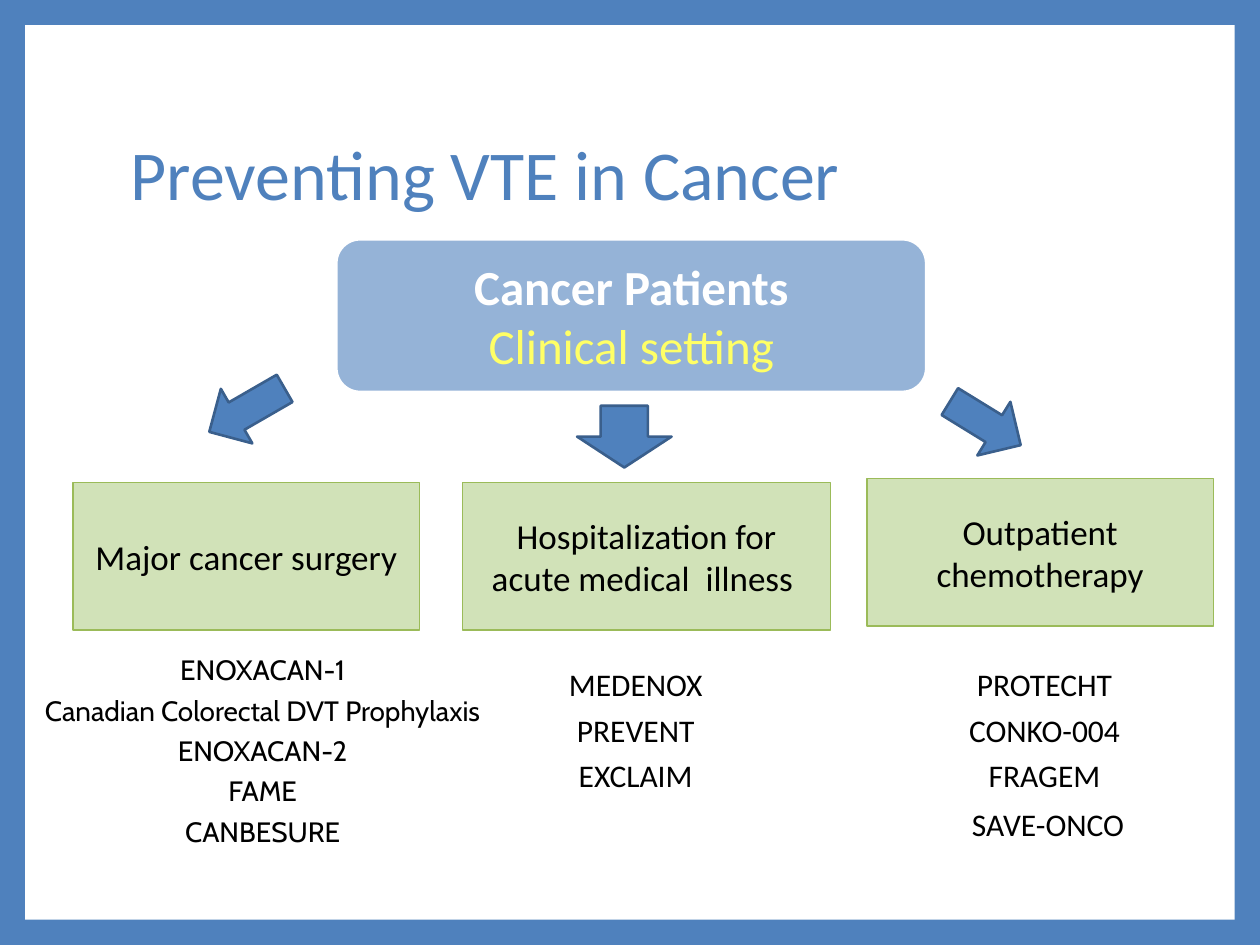
from pptx import Presentation
from pptx.dml.color import RGBColor
from pptx.enum.shapes import MSO_SHAPE as Shape
from pptx.enum.text import MSO_ANCHOR as Anchor, PP_ALIGN as Align
from pptx.util import Inches, Pt

COLORS = {
    "blue": "4F81BD", "dark_blue": "3A5F8C", "pale_blue": "95B3D7",
    "green": "9BBB59", "pale_green": "D1E2B8",
    "white": "FFFFFF", "yellow": "FFFF66", "black": "000000",
}
SETTINGS = [
    ("Major cancer surgery", (0.58, 3.83, 2.75, 1.17)),
    ("Hospitalization for acute medical  illness ", (3.67, 3.83, 2.92, 1.17)),
    ("Outpatient chemotherapy", (6.88, 3.8, 2.75, 1.17)),
]
ARROWS = [
    ((1.71, 2.91, 0.5, 0.69), 60),
    ((7.57, 3.03, 0.5, 0.66), 301.6),
    ((4.58, 3.22, 0.75, 0.49), 0),
]
TRIALS = [
    (["ENOXACAN-1", "Canadian Colorectal DVT Prophylaxis", "ENOXACAN-2", "FAME", "CANBESURE"],
     (0, 5.08, 4.17, 1.72), 16, "Cabin"),
    (["MEDENOX", "PREVENT", "EXCLAIM"], (3.67, 5.17, 2.75, 1.19), 18, "Calibri"),
    (["PROTECHT", "CONKO-004", "FRAGEM"], (6.83, 5.17, 2.92, 1.19), 18, "Calibri"),
    ([" SAVE-ONCO"], (6.83, 6.28, 2.92, 0.44), 18, "Calibri"),
]


def color(name):
    """Return the named colour."""
    return RGBColor.from_string(COLORS[name])


class SlideBuilder:
    """Draws styled elements on the current page."""

    def __init__(self, page):
        """Keep the page and its default font."""
        self.page = page
        self.font = "Calibri"

    def background(self, fill):
        """Fill the page background."""
        self.page.background.fill.solid()
        self.page.background.fill.fore_color.rgb = color(fill)

    def shape(self, kind, place, fill, line=None, width=1, rotation=0):
        """Add a flat preset shape."""
        shape = self.page.shapes.add_shape(kind, *map(Inches, place))
        shape.shadow.inherit = False
        shape.rotation = rotation
        shape.fill.solid()
        shape.fill.fore_color.rgb = color(fill)
        if line:
            shape.line.color.rgb = color(line)
            shape.line.width = Pt(width)
        else:
            shape.line.fill.background()
        return shape

    def label(self, box, lines, size, inks=("black",), font=None, align=Align.CENTER,
              anchor=Anchor.MIDDLE, spacing=None):
        """Set one paragraph per line, inks repeating in turn."""
        frame = box.text_frame
        frame.word_wrap = True
        frame.vertical_anchor = anchor
        frame.text = "\n".join(lines)
        for index, para in enumerate(frame.paragraphs):
            para.alignment = align
            para.line_spacing = spacing
            for span in para.runs:
                span.font.name = font or self.font
                span.font.size = Pt(size)
                span.font.bold = False
                span.font.color.rgb = color(inks[index % len(inks)])

    def text(self, place, lines, size, **style):
        """Add a text box."""
        box = self.page.shapes.add_textbox(*map(Inches, place))
        self.label(box, lines, size, **style)


def main():
    """Build the slide."""
    deck = Presentation()
    deck.slide_width, deck.slide_height = Inches(10), Inches(7.5)
    builder = SlideBuilder(deck.slides.add_slide(deck.slide_layouts[6]))
    builder.background("blue")
    builder.shape(Shape.RECTANGLE, (0.2, 0.2, 9.6, 7.1), "white")
    builder.text((0.94, 0.67, 8.1, 1.48), ["Preventing VTE in Cancer"], 40,
                 inks=("blue",), align=Align.LEFT, spacing=0.9)

    patients = builder.shape(Shape.ROUNDED_RECTANGLE, (2.65, 1.88, 4.72, 1.25),
                             "pale_blue", "white", 4.25)
    builder.label(patients, ["Cancer Patients", "Clinical setting"], 28,
                  inks=("white", "yellow"))
    patients.text_frame.paragraphs[0].runs[0].font.bold = True

    for name, place in SETTINGS:
        setting = builder.shape(Shape.RECTANGLE, place, "pale_green", "green", 0.79)
        builder.label(setting, [name], 20)
    for place, rotation in ARROWS:
        builder.shape(Shape.DOWN_ARROW, place, "blue", "dark_blue", 1.5, rotation)
    for names, place, size, font in TRIALS:
        builder.text(place, names, size, font=font, anchor=Anchor.TOP, spacing=1.2)
    deck.save("out.pptx")


if __name__ == "__main__":
    main()
